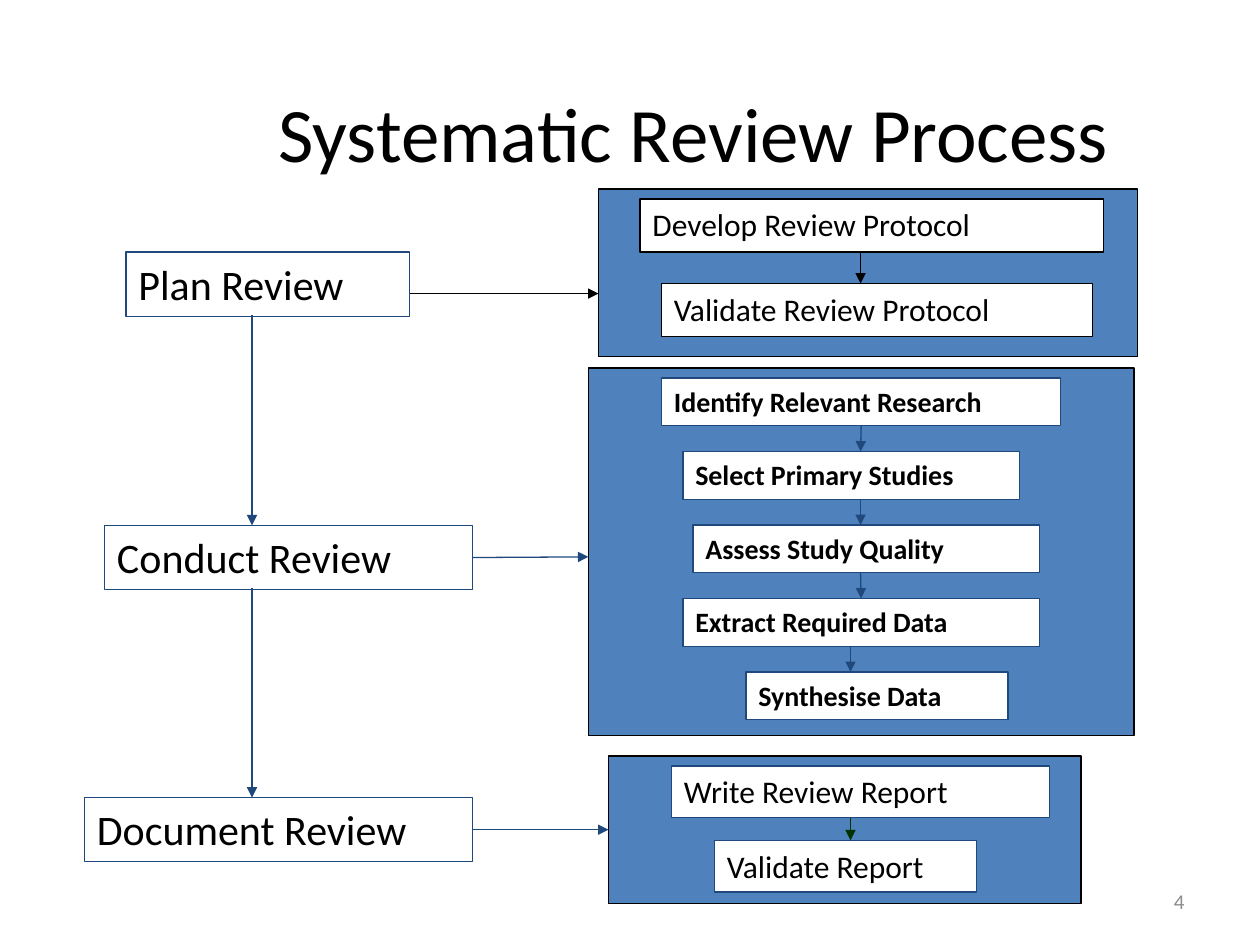
from lxml import etree
from pptx import Presentation
from pptx.dml.color import RGBColor
from pptx.enum.shapes import MSO_CONNECTOR, MSO_SHAPE
from pptx.enum.text import MSO_ANCHOR, PP_ALIGN
from pptx.oxml.ns import qn
from pptx.util import Inches, Pt

BLACK = RGBColor(0x00, 0x00, 0x00)
WHITE = RGBColor(0xFF, 0xFF, 0xFF)
BLUE = RGBColor(0x4F, 0x81, 0xBD)
NAVY = RGBColor(0x1F, 0x49, 0x7D)
GREEN = RGBColor(0x00, 0x33, 0x00)
GRAY = RGBColor(0x8C, 0x8C, 0x8C)

BOTTOM, TOP, LEFT, RIGHT = 2, 0, 1, 3

prs = Presentation()
prs.slide_width, prs.slide_height = Inches(10), Inches(7.5)
slide = prs.slides.add_slide(prs.slide_layouts[5])


def add_box(left, top, width, height, fill, line, text="", size=18, bold=False):
    box = slide.shapes.add_shape(
        MSO_SHAPE.RECTANGLE, Inches(left), Inches(top), Inches(width), Inches(height))
    box.shadow.inherit = False
    if fill is None:
        box.fill.background()
    else:
        box.fill.solid()
        box.fill.fore_color.rgb = fill
    box.line.color.rgb = line
    box.line.width = Pt(0.75)
    if text:
        box.text_frame.text = text
        box.text_frame.vertical_anchor = MSO_ANCHOR.TOP
        paragraph = box.text_frame.paragraphs[0]
        paragraph.alignment = PP_ALIGN.LEFT
        paragraph.font.color.rgb = BLACK
        for name, value in {"name": "Calibri", "size": Pt(size), "bold": bold}.items():
            setattr(paragraph.font, name, value)
    return box


def add_arrow(x1, y1, x2, y2, color):
    arrow = slide.shapes.add_connector(
        MSO_CONNECTOR.STRAIGHT, Inches(x1), Inches(y1), Inches(x2), Inches(y2))
    arrow.line.color.rgb = color
    arrow.line.width = Pt(0.75)
    etree.SubElement(arrow.line._get_or_add_ln(), qn("a:tailEnd"), type="triangle")
    etree.SubElement(arrow._element.spPr, qn("a:effectLst"))
    return arrow


title = slide.shapes.title
title.left, title.top = Inches(1.67), Inches(0.42)
title.width, title.height = Inches(7.67), Inches(1.25)
title.text_frame.text = "Systematic Review Process"
title.text_frame.vertical_anchor = MSO_ANCHOR.MIDDLE
heading = title.text_frame.paragraphs[0]
heading.alignment = PP_ALIGN.CENTER
heading.font.color.rgb = BLACK
for name, value in {"name": "Calibri", "size": Pt(44)}.items():
    setattr(heading.font, name, value)

page = slide.shapes.add_textbox(Inches(7.17), Inches(6.95), Inches(2.33), Inches(0.4))
page.text_frame.word_wrap = True
page.text_frame.text = "4"
page.text_frame.vertical_anchor = MSO_ANCHOR.MIDDLE
page_number = page.text_frame.paragraphs[0]
page_number.alignment = PP_ALIGN.RIGHT
page_number.font.color.rgb = GRAY
for name, value in {"name": "Calibri", "size": Pt(12)}.items():
    setattr(page_number.font, name, value)

plan_panel = add_box(4.75, 1.5, 4.28, 1.33, BLUE, BLACK)
conduct_panel = add_box(4.67, 2.92, 4.33, 2.92, BLUE, BLACK)
document_panel = add_box(4.83, 6, 3.75, 1.17, BLUE, BLACK)

phases = [
    add_box(left, top, width, 0.51, None, NAVY, text, 24)
    for text, left, top, width in [
        ("Plan Review", 1, 2, 2.25),
        ("Conduct Review", 0.83, 4.17, 2.92),
        ("Document Review", 0.67, 6.33, 3.08),
    ]
]

for text, left, top, width, height, line in [
    ("Develop Review Protocol", 5.08, 1.58, 3.68, 0.42, BLACK),
    ("Validate Review Protocol", 5.25, 2.25, 3.42, 0.42, BLACK),
    ("Write Review Report", 5.33, 6.08, 3, 0.41, NAVY),
    ("Validate Report", 5.67, 6.67, 2.08, 0.41, NAVY),
]:
    add_box(left, top, width, height, WHITE, line, text)

STEP_TOP, STEP_PITCH, STEP_HEIGHT = 3, 7 / 12, 0.38
steps = [
    add_box(left, STEP_TOP + i * STEP_PITCH, width, STEP_HEIGHT, WHITE, NAVY, text, 16, True)
    for i, (text, left, width) in enumerate([
        ("Identify Relevant Research", 5.25, 3.17),
        ("Select Primary Studies", 5.42, 2.67),
        ("Assess Study Quality", 5.5, 2.75),
        ("Extract Required Data", 5.42, 2.83),
        ("Synthesise Data", 5.92, 2.08),
    ])
]

step_arrows = []
for i, x in enumerate([6.83, 6.83, 6.83, 6.75]):
    top = STEP_TOP + i * STEP_PITCH
    step_arrows.append(add_arrow(x, top + STEP_HEIGHT, x, top + STEP_PITCH, NAVY))
step_arrows[0].begin_connect(steps[0], BOTTOM)
step_arrows[2].end_connect(steps[3], TOP)

for x, start, end, color in [
    (6.83, 2, 2.25, BLACK),
    (6.75, 6.49, 6.67, GREEN),
    (2, 2.5, 4.17, NAVY),
    (2, 4.67, 6.33, NAVY),
]:
    add_arrow(x, start, x, end, color)

add_arrow(3.25, 2.33, 4.75, 2.33, BLACK)
to_conduct = add_arrow(3.75, 4.42, 4.67, 4.42, NAVY)
to_conduct.begin_connect(phases[1], RIGHT)
to_document = add_arrow(3.75, 6.58, 4.83, 6.58, NAVY)
to_document.begin_connect(phases[2], RIGHT)
to_document.end_connect(document_panel, LEFT)

prs.save("out.pptx")
